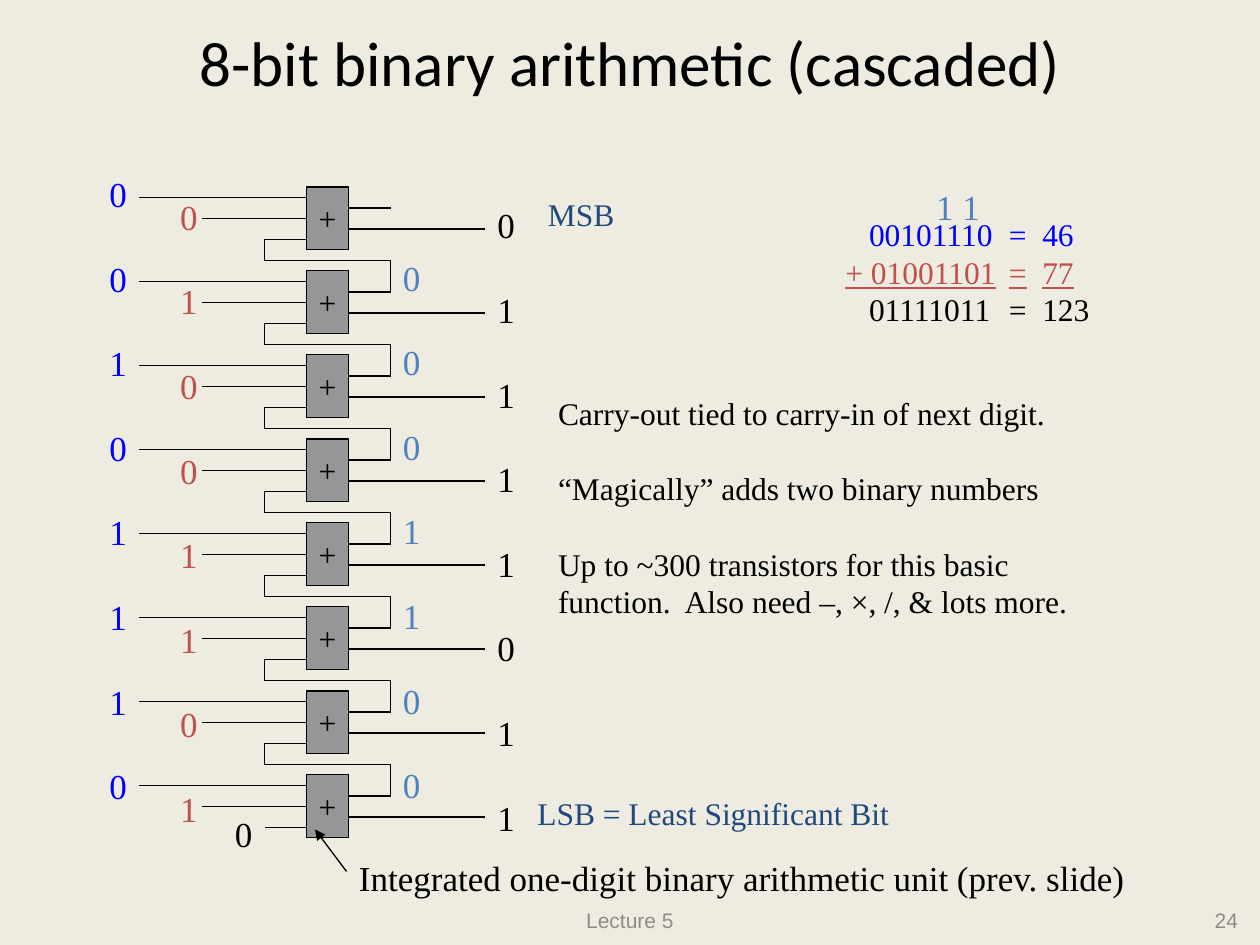
from lxml.etree import SubElement
from pptx import Presentation
from pptx.dml.color import RGBColor
from pptx.enum.shapes import MSO_CONNECTOR as CONN, MSO_SHAPE as SHAPE
from pptx.enum.text import MSO_ANCHOR as ANCHOR, MSO_AUTO_SIZE as AUTO, PP_ALIGN as ALIGN
from pptx.oxml.ns import qn
from pptx.util import Pt

BLACK, BLUE, RED = "000000", "0000FF", "C0504D"
CARRY, NAVY, GRAY = "4F81BD", "1F497D", "8C8C8C"
SERIF = "Times New Roman"

# Bits from most to least significant: text, left, top of first, colour
DIGIT_COLUMNS = [
    ("01001101", 95.8, 108, RED),
    ("00101110", 55.4, 95, BLUE),
    ("01111011", 277.2, 113, BLACK),
    ("0001100", 223.2, 142.8, CARRY),
]
DIGIT_PITCH = 48.35

# Text, box, size, colour, font, alignment
FRAME_TEXTS = [
    ("8-bit binary arithmetic (cascaded)", (36, 6, 648, 57.6), 36, BLACK, "Calibri", ALIGN.CENTER),
    ("Lecture 5", (246, 511, 228, 29), 12, GRAY, "Arial", ALIGN.CENTER),
    ("24", (546.5, 511, 168, 29), 12, GRAY, "Arial", ALIGN.RIGHT),
]
LABELS = [
    ("0", (127.2, 460.8, 24.5, 31), 20, BLACK),
    ("1 1", (527.8, 102.2, 39.6, 31), 20, CARRY),
    ("MSB", (306, 108, 65.5, 36), 18, NAVY),
    ("LSB = Least Significant Bit", (300, 450, 283, 36), 18, NAVY),
    ("Integrated one-digit binary arithmetic unit (prev. slide)", (198, 486, 453, 31), 20, BLACK),
]
# Text, colour, underline
SUM_LINES = [
    ("\t00101110\t=\t46", BLUE, False),
    ("+ 01001101\t=\t77", RED, True),
    ("\t01111011\t=\t123", BLACK, False),
]
SUM_TABS = (13.5, 93.5, 112.5)
# Text, space before
NOTES = [
    ("Carry-out tied to carry-in of next digit.", 0),
    ("“Magically” adds two binary numbers", 21.5),
    ("Up to ~300 transistors for this basic", 21.5),
    ("function.  Also need –, ×, /, & lots more.", 0),
]
LINE_HEIGHT = 21.5

# Adder cell: box, wire ends, wire heights below the top of the box
ADDERS, ADDER_PITCH = 8, 48
BOX_X, BOX_Y, BOX_W, BOX_H = 175.2, 106.8, 24, 36
BOX_RIGHT = BOX_X + BOX_W
A_X, B_X, CARRY_IN_X, CARRY_OUT_X, SUM_X = 79.2, 115.2, 151.2, 223.2, 277.2
A_Y, CARRY_OUT_Y, B_Y, SUM_Y, CARRY_IN_Y, BEND_Y = 6, 12, 18, 24, 30, 42

prs = Presentation()
prs.slide_width, prs.slide_height = Pt(720), Pt(540)
s = prs.slides.add_slide(prs.slide_layouts[6])


def rgb(color):
    return RGBColor.from_string(color)


s.background.fill.solid()
s.background.fill.fore_color.rgb = rgb("EEECE1")


def add_run(p, text, size, color, font=SERIF, **extra):
    r = p.add_run()
    r.text = text
    for name, value in {"size": Pt(size), "name": font, **extra}.items():
        setattr(r.font, name, value)
    r.font.color.rgb = rgb(color)


def add_box(box, **frame):
    """Add a text box and return its text frame; growing and unwrapped by default."""
    tf = s.shapes.add_textbox(*map(Pt, box)).text_frame
    for name, value in {"word_wrap": False, "auto_size": AUTO.SHAPE_TO_FIT_TEXT, **frame}.items():
        setattr(tf, name, value)
    return tf


def add_label(text, box, size, color):
    add_run(add_box(box).paragraphs[0], text, size, color)


def next_paragraph(tf, first, space_before=0):
    p = tf.paragraphs[0] if first else tf.add_paragraph()
    p.line_spacing, p.space_before = Pt(LINE_HEIGHT), Pt(space_before)
    return p


def style_line(sp):
    sp.line.color.rgb = rgb(BLACK)
    sp.line.width = Pt(0.75)


def add_line(x1, y1, x2, y2):
    c = s.shapes.add_connector(CONN.STRAIGHT, Pt(x1), Pt(y1), Pt(x2), Pt(y2))
    style_line(c)
    SubElement(c._element.spPr, qn("a:effectLst"))
    return c


def add_adder(top):
    sp = s.shapes.add_shape(SHAPE.RECTANGLE, Pt(BOX_X), Pt(top), Pt(BOX_W), Pt(BOX_H))
    sp.shadow.inherit = False
    sp.fill.solid()
    sp.fill.fore_color.rgb = rgb("969696")
    style_line(sp)
    tf = sp.text_frame
    tf.word_wrap, tf.vertical_anchor = False, ANCHOR.MIDDLE
    p = tf.paragraphs[0]
    p.alignment = ALIGN.CENTER
    add_run(p, "+", 18, BLACK)
    for x1, x2, dy in [
        (BOX_X, A_X, A_Y),
        (BOX_X, CARRY_IN_X, CARRY_IN_Y),
        (BOX_X, B_X, B_Y),
        (BOX_RIGHT, SUM_X, SUM_Y),
        (BOX_RIGHT, CARRY_OUT_X, CARRY_OUT_Y),
    ]:
        wire = add_line(x1, top + dy, x2, top + dy)
        if dy == B_Y:
            wire.begin_connect(sp, 1)


def add_carry_path(top):
    """Tie the carry-in of the adder at top to the carry-out of the one below."""
    bend = top + BEND_Y
    points = [(CARRY_IN_X, bend), (CARRY_OUT_X, bend),
              (CARRY_OUT_X, top + ADDER_PITCH + CARRY_OUT_Y)]
    fb = s.shapes.build_freeform(Pt(CARRY_IN_X), Pt(top + CARRY_IN_Y))
    fb.add_line_segments([(Pt(x), Pt(y)) for x, y in points], close=False)
    sp = fb.convert_to_shape()
    sp.shadow.inherit = False
    sp.fill.background()
    style_line(sp)


for text, box, size, color, font, align in FRAME_TEXTS:
    tf = add_box(box, word_wrap=True, auto_size=AUTO.NONE, vertical_anchor=ANCHOR.MIDDLE)
    tf.paragraphs[0].alignment = align
    add_run(tf.paragraphs[0], text, size, color, font)

for bits, left, top, color in DIGIT_COLUMNS:
    for i, bit in enumerate(bits):
        add_label(bit, (left, top + i * DIGIT_PITCH, 24.5, 31), 20, color)

adder_tops = [BOX_Y + i * ADDER_PITCH for i in range(ADDERS)]
for top in adder_tops:
    add_adder(top)
for top in adder_tops[:-1]:
    add_carry_path(top)

for label in LABELS:
    add_label(*label)

tf = add_box((476, 119.5, 202.3, 93.6))
for i, (text, color, underline) in enumerate(SUM_LINES):
    p = next_paragraph(tf, i == 0)
    add_run(p, text, 18, color, underline=underline)
    tabs = SubElement(p._p.get_or_add_pPr(), qn("a:tabLst"))
    for pos in SUM_TABS:
        SubElement(tabs, qn("a:tab"), pos=str(int(Pt(pos))), algn="l")

tf = add_box((311.8, 221.8, 404, 180))
for i, (text, gap) in enumerate(NOTES):
    add_run(next_paragraph(tf, i == 0, gap), text, 18, BLACK)

pointer = add_line(198, 498, 180, 474)
SubElement(pointer.line._get_or_add_ln(), qn("a:tailEnd"), type="triangle")

prs.save("out.pptx")
